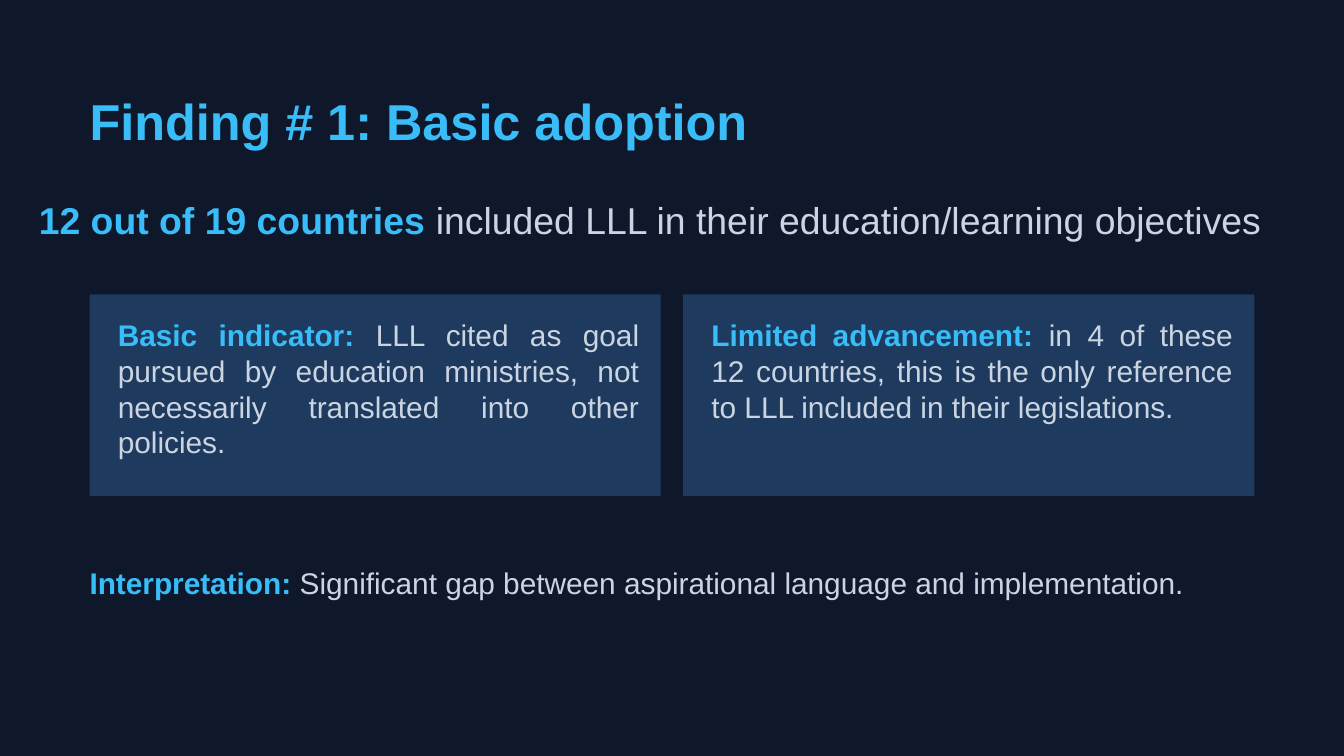
from pptx import Presentation
from pptx.dml.color import RGBColor as RGB
from pptx.enum.shapes import MSO_SHAPE as Shape
from pptx.enum.text import MSO_ANCHOR as Anchor, PP_ALIGN as Align
from pptx.util import Inches, Pt

TITLE = "Finding # 1: Basic adoption"
LEAD = ("12 out of 19 countries",
        " included LLL in their education/learning objectives")
CARDS = [
    ("Basic indicator:", " LLL cited as goal pursued by education ministries,"
     " not necessarily translated into other policies."),
    ("Limited advancement:", " in 4 of these 12 countries, this is the only"
     " reference to LLL included in their legislations."),
]
CLOSE = ("Interpretation:",
         " Significant gap between aspirational language and implementation.")

NIGHT, NAVY, SKY, MIST = "0F172A", "1E3A5F", "38BDF8", "CBD5E1"
WIDE = 10
HIGH = WIDE * 9 / 16
EDGE, GAP = WIDE / 15, WIDE / 60
CARD = (WIDE - 2 * EDGE - GAP) / 2
TOP, TALL = 2.19, 1.5
PAD_X, PAD_Y = 0.21, 0.17


def tint(code):
    """Return the colour of a hex string."""
    return RGB.from_string(code)


def write(box, parts, size, line, align=Align.LEFT):
    """Set a bold sky label and an optional plain rest in a box."""
    frame = box.text_frame
    frame.word_wrap = True
    frame.vertical_anchor = Anchor.TOP
    frame.margin_left = frame.margin_right = 0
    frame.margin_top = frame.margin_bottom = 0
    para = frame.paragraphs[0]
    para.alignment = align
    para.line_spacing = Pt(line)
    para.space_before = Pt(0)
    para.font.name = "Arial"
    para.font.size = Pt(size)
    for text, code, bold in zip(parts, (SKY, MIST), (True, False)):
        run = para.add_run()
        run.text = text
        run.font.color.rgb = tint(code)
        run.font.bold = bold


def main():
    """Build the slide and save it."""
    deck = Presentation()
    deck.slide_width, deck.slide_height = Inches(WIDE), Inches(HIGH)
    slide = deck.slides.add_slide(deck.slide_layouts[5])
    slide.background.fill.solid()
    slide.background.fill.fore_color.rgb = tint(NIGHT)
    shapes = slide.shapes

    def text(*area):
        return shapes.add_textbox(*map(Inches, area))

    title = shapes.title
    title.left, title.top = Inches(EDGE), Inches(0.67)
    title.width, title.height = Inches(8.84), Inches(0.44)
    write(title, [TITLE], 27, 32.4)
    write(text(-0.11, 1.35, 9.9, 0.33), LEAD, 20, 32.4, Align.CENTER)

    for col, parts in enumerate(CARDS):
        left = EDGE + col * (CARD + GAP)
        card = shapes.add_shape(
            Shape.RECTANGLE, *map(Inches, (left, TOP, CARD, TALL)))
        card.shadow.inherit = False
        card.fill.solid()
        card.fill.fore_color.rgb = tint(NAVY)
        card.line.fill.background()
        box = text(left + PAD_X, TOP + PAD_Y, 3.88, TALL - PAD_Y)
        write(box, parts, 16, 19.1, Align.JUSTIFY)

    write(text(EDGE, 4.28, WIDE - 2 * EDGE, 0.33), CLOSE, 16, 13.7)
    deck.save("out.pptx")


if __name__ == "__main__":
    main()
